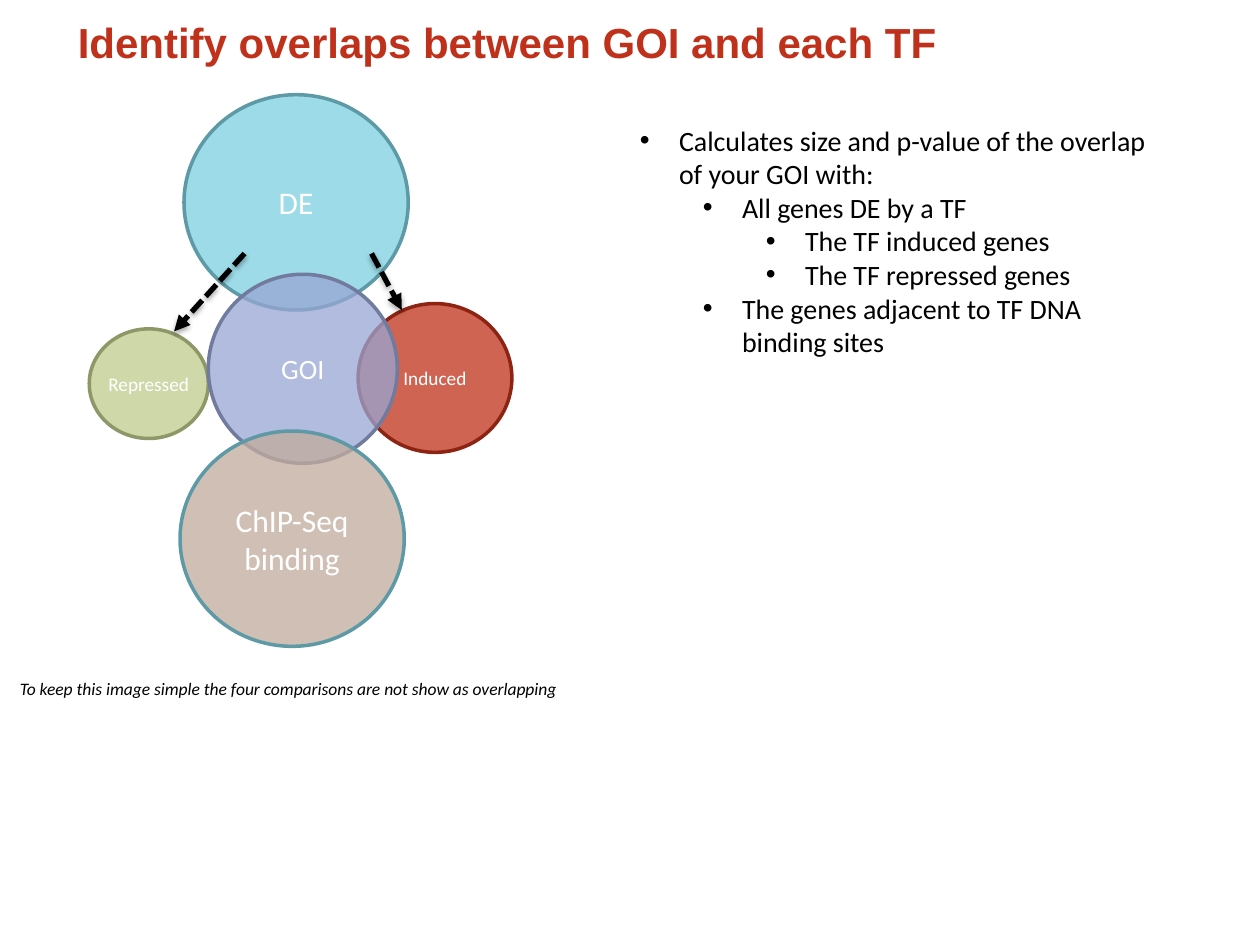
from lxml.etree import SubElement
from pptx import Presentation
from pptx.dml.color import RGBColor
from pptx.enum.dml import MSO_LINE
from pptx.enum.shapes import MSO_CONNECTOR, MSO_SHAPE
from pptx.enum.text import MSO_ANCHOR, PP_ALIGN
from pptx.oxml.ns import qn
from pptx.util import Cm, Pt

COLORS = {
    "title": "BF311A", "text": "000000", "label": "FFFFFF",
    "blue": "7ED0E0", "blue line": "5D9AA6",
    "green": "BECC8D", "green line": "8D9768",
    "red": "BF311A", "red line": "8D2413",
    "violet": "98A6D4", "violet line": "707B9D",
    "tan": "C2AC9D",
}


def color(name):
    return RGBColor.from_string(COLORS[name])


def write(paragraph, text, color_name, **formats):
    """Add a run and set its font attributes."""
    run = paragraph.add_run()
    run.text = text
    run.font.color.rgb = color(color_name)
    for name, value in ({"name": "Calibri"} | formats).items():
        setattr(run.font, name, value)


presentation = Presentation()
presentation.slide_width, presentation.slide_height = Cm(25.4), Cm(19.05)
slide = presentation.slides.add_slide(presentation.slide_layouts[6])

# Gene sets and arrows, from back to front
gene_sets = [
    ("DE", 3.71, 1.91, 4.52, 4.34, "blue", "blue line", 76, 18),
    ("Repressed", 1.8, 6.63, 2.4, 2.21, "green", "green line", 75, 11),
    ("Induced", 7.22, 6.12, 3.1, 3.0, "red", "red line", 75, 11),
    ("GOI", 4.2, 5.53, 3.81, 3.81, "violet", "violet line", 75, 16),
    ("ChIP-Seq binding", 3.63, 8.69, 4.52, 4.34, "tan", "blue line", 76, 18),
]
arrows = [(7.49, 5.11, 8.1, 6.25), (4.93, 5.11, 3.51, 6.68)]

for label, left, top, width, height, fill, line, opacity, size in gene_sets:
    if label == "GOI":
        for ends in arrows:
            arrow = slide.shapes.add_connector(
                MSO_CONNECTOR.STRAIGHT, *[Cm(end) for end in ends])
            arrow.line.color.rgb = color("text")
            arrow.line.width = Pt(3)
            arrow.line.dash_style = MSO_LINE.SQUARE_DOT
            properties = arrow._element.spPr
            SubElement(properties.find(qn("a:ln")), qn("a:tailEnd"), type="triangle")
            effects = SubElement(properties, qn("a:effectLst"))
            shadow = SubElement(
                effects, qn("a:outerShdw"), blurRad=str(Pt(3.1)),
                dist=str(Pt(1.8)), dir="5400000", rotWithShape="0")
            shadow_color = SubElement(shadow, qn("a:srgbClr"), val=COLORS["text"])
            SubElement(shadow_color, qn("a:alpha"), val="35000")

    circle = slide.shapes.add_shape(
        MSO_SHAPE.OVAL, Cm(left), Cm(top), Cm(width), Cm(height))
    circle.shadow.inherit = False
    circle.fill.solid()
    circle.fill.fore_color.rgb = color(fill)
    fill_color = circle._element.spPr.find(qn("a:solidFill")).find(qn("a:srgbClr"))
    SubElement(fill_color, qn("a:alpha"), val=str(opacity * 1000))
    circle.line.color.rgb = color(line)
    circle.line.width = Pt(2)
    frame = circle.text_frame
    frame.word_wrap = True
    frame.vertical_anchor = MSO_ANCHOR.MIDDLE
    if label == "Repressed":
        for side in ("left", "top", "right", "bottom"):
            setattr(frame, f"margin_{side}", 0)
    frame.paragraphs[0].alignment = PP_ALIGN.CENTER
    write(frame.paragraphs[0], label, "label", size=Pt(size))

# Bulleted explanation
bullets = [
    (0, "Calculates size and p-value of the overlap of your GOI with:"),
    (1, "All genes DE by a TF"),
    (2, "The TF induced genes"),
    (2, "The TF repressed genes"),
    (1, "The genes adjacent to TF DNA binding sites"),
]
frame = slide.shapes.add_textbox(Cm(12.65), Cm(2.36), Cm(11.02), Cm(9.14)).text_frame
frame.word_wrap = True
for index, (level, text) in enumerate(bullets):
    paragraph = frame.add_paragraph() if index else frame.paragraphs[0]
    paragraph.level = level
    properties = paragraph._p.get_or_add_pPr()
    properties.set("marL", str(Cm(0.79 + 1.27 * level)))
    properties.set("indent", str(Cm(-0.79)))
    SubElement(properties, qn("a:buFont"), typeface="Arial")
    SubElement(properties, qn("a:buChar"), char="•")
    write(paragraph, text, "text", size=Pt(16))

# Note below the circles
frame = slide.shapes.add_textbox(Cm(0.15), Cm(13.54), Cm(11.48), Cm(0.69)).text_frame
frame.word_wrap = False
write(frame.paragraphs[0],
      "To keep this image simple the four comparisons are not show as overlapping",
      "text", size=Pt(10), italic=True)

# Title
frame = slide.shapes.add_textbox(Cm(1.32), Cm(0.2), Cm(20.32), Cm(1.27)).text_frame
frame.word_wrap = True
frame.vertical_anchor = MSO_ANCHOR.MIDDLE
write(frame.paragraphs[0], "Identify overlaps between GOI and each TF", "title",
      name="Arial", size=Pt(24), bold=True)

presentation.save("out.pptx")
